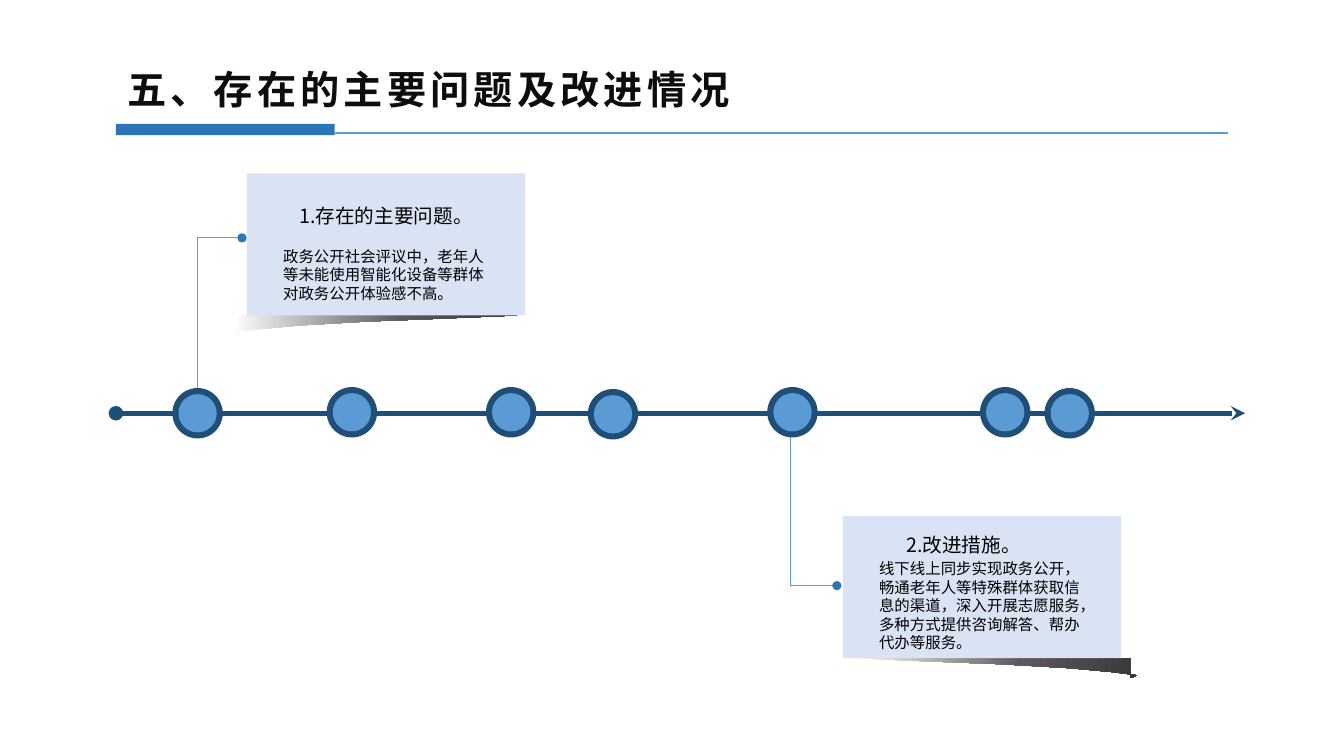
"""Build the timeline slide on main problems and improvements."""
from copy import deepcopy
from dataclasses import dataclass

from lxml.etree import SubElement
from pptx import Presentation
from pptx.dml.color import RGBColor
from pptx.enum.shapes import MSO_CONNECTOR, MSO_SHAPE
from pptx.enum.text import MSO_ANCHOR, MSO_AUTO_SIZE, PP_ALIGN
from pptx.oxml.ns import qn
from pptx.util import Inches, Pt

TITLE = "五、存在的主要问题及改进情况"
CARDS = [
    {
        "heading": "1.存在的主要问题。",
        "body": "政务公开社会评议中，老年人等未能使用智能化设备等群体对政务公开体验感不高。",
        "card": (2.45, 1.72),
        "heading_box": (2.87, 1.97, 2.01, 0.34),
        "body_box": (2.71, 2.4, 2.25, 0.65),
        "stem": (1.96, 3.85),
        "dot": (2.4, 2.36),
        "shadow_left": 2.37,
        "mirrored": False,
    },
    {
        "heading": "2.改进措施。",
        "body": "线下线上同步实现政务公开，畅通老年人等特殊群体获取信息的渠道，深入开展志愿服务，多种方式提供咨询解答、帮办代办等服务。",
        "card": (8.36, 5.12),
        "heading_box": (8.89, 5.24, 1.33, 0.34),
        "body_box": (8.62, 5.5, 2.25, 1.03),
        "stem": (7.84, 4.32),
        "dot": (8.3, 5.81),
        "shadow_left": 8.45,
        "mirrored": True,
    },
]
MILESTONES = [(1.96, 4.1), (3.49, 4.09), (5.07, 4.09), (6.08, 4.11),
              (7.86, 4.09), (9.97, 4.09), (10.61, 4.1)]
CARD_WIDTH, CARD_HEIGHT = 2.76, 1.41
SHADOW_OUTLINE = [(0, 0.2), (-0.07, 0.17), (0.16, 0.14), (0.59, 0.1), (1.28, 0.06),
                  (1.81, 0.04), (2.76, 0), (0, 0)]


@dataclass(frozen=True)
class Theme:
    """Colours, font and type sizes of the slide."""
    font: str = "Noto Sans CJK SC"
    title_ink: str = "0D0D0D"
    ink: str = "000000"
    accent: str = "2E75B6"
    light: str = "5B9BD5"
    dark: str = "1F4E79"
    card: str = "DAE3F3"
    shadow: tuple = ((0, "FFFFFF"), (0.59, "5B595B"), (1, "3B3838"))
    title_size: float = 28
    heading_size: float = 14
    body_size: float = 11


THEME = Theme()


def write_text(shape, text, size, color=THEME.ink, bold=False, spacing=0, wrap=False):
    """Put one formatted run of text in a shape."""
    frame = shape.text_frame
    frame.word_wrap = wrap
    frame.auto_size = MSO_AUTO_SIZE.SHAPE_TO_FIT_TEXT
    frame.vertical_anchor = MSO_ANCHOR.TOP
    paragraph = frame.paragraphs[0]
    paragraph.alignment = PP_ALIGN.LEFT
    run = paragraph.add_run()
    run.text = text
    run.font.size, run.font.bold = Pt(size), bold
    run.font.color.rgb = RGBColor.from_string(color)
    run.font.name = THEME.font
    properties = run.font._element
    SubElement(properties, qn("a:ea")).set("typeface", THEME.font)
    if spacing:
        properties.set("spc", str(spacing * 100))


def add_block(slide, kind, left, top, width, height, color):
    """Add a flat filled shape."""
    shape = slide.shapes.add_shape(kind, *map(Inches, (left, top, width, height)))
    shape.shadow.inherit = False
    shape.fill.solid()
    shape.fill.fore_color.rgb = RGBColor.from_string(color)
    shape.line.fill.background()


def add_circle(slide, center, diameter, color):
    """Add a filled circle around a centre point."""
    left, top = (value - diameter / 2 for value in center)
    add_block(slide, MSO_SHAPE.OVAL, left, top, diameter, diameter, color)


def add_line(slide, start, end, color, width, kind=MSO_CONNECTOR.STRAIGHT):
    """Add a connector without shadow."""
    line = slide.shapes.add_connector(kind, *map(Inches, (*start, *end)))
    line.line.color.rgb = RGBColor.from_string(color)
    line.line.width = Pt(width)
    SubElement(line._element.spPr, qn("a:effectLst"))
    return line


def add_stem(slide, start, end):
    """Add an elbow that runs vertically first, then across."""
    stem = add_line(slide, start, end, THEME.light, 0.5, MSO_CONNECTOR.ELBOW)
    adjustments = stem._element.spPr.find(qn("a:prstGeom")).find(qn("a:avLst"))
    guide = SubElement(adjustments, qn("a:gd"))
    guide.set("name", "adj1")
    guide.set("fmla", "val 0")


def add_curl(slide, left, top, mirrored):
    """Add the curved gradient shadow below a card."""
    points = [(Inches(left + (CARD_WIDTH - x if mirrored else x)), Inches(top + y))
              for x, y in SHADOW_OUTLINE]
    builder = slide.shapes.build_freeform(*points[0])
    builder.add_line_segments(points[1:], close=True)
    curl = builder.convert_to_shape()
    curl.shadow.inherit = False
    curl.line.fill.background()
    curl.fill.gradient()
    curl.fill.gradient_angle = 0
    stop_list = curl._element.spPr.find(qn("a:gradFill")).find(qn("a:gsLst"))
    stop_list.append(deepcopy(stop_list[0]))
    for stop, (position, color) in zip(curl.fill.gradient_stops, THEME.shadow):
        stop.position = position
        stop.color.rgb = RGBColor.from_string(color)


def add_title(slide):
    """Fill the title placeholder and underline it."""
    title = slide.shapes.title
    title.left, title.top, title.width, title.height = map(Inches, (1.16, 0.6, 6.26, 0.57))
    write_text(title, TITLE, THEME.title_size, color=THEME.title_ink, bold=True, spacing=3)
    add_block(slide, MSO_SHAPE.RECTANGLE, 1.15, 1.23, 2.17, 0.11, THEME.accent)
    add_line(slide, (3.32, 1.32), (12.18, 1.32), THEME.light, 2)


def add_card(slide, item):
    """Add a card with its shadow, texts and stem."""
    left, top = item["card"]
    add_curl(slide, item["shadow_left"], top + CARD_HEIGHT, item["mirrored"])
    add_block(slide, MSO_SHAPE.RECTANGLE, left, top, CARD_WIDTH, CARD_HEIGHT, THEME.card)
    for part, size, wrap in (("heading", THEME.heading_size, False),
                             ("body", THEME.body_size, True)):
        box = slide.shapes.add_textbox(*map(Inches, item[f"{part}_box"]))
        write_text(box, item[part], size, wrap=wrap)
    add_stem(slide, item["stem"], item["dot"])
    add_circle(slide, item["dot"], 0.09, THEME.accent)


def add_timeline(slide):
    """Add the arrow and its milestones."""
    axis = add_line(slide, (1.15, 4.1), (12.35, 4.1), THEME.dark, 3.5)
    outline = axis.line._get_or_add_ln()
    for end, kind in (("headEnd", "oval"), ("tailEnd", "stealth")):
        SubElement(outline, qn(f"a:{end}")).set("type", kind)
    for center in MILESTONES:
        add_circle(slide, center, 0.5, THEME.dark)
        add_circle(slide, center, 0.38, THEME.light)


def main():
    """Create and save the presentation."""
    presentation = Presentation()
    presentation.slide_width, presentation.slide_height = Inches(13.33), Inches(7.5)
    slide = presentation.slides.add_slide(presentation.slide_layouts[5])
    add_title(slide)
    for item in CARDS:
        add_card(slide, item)
    add_timeline(slide)
    presentation.save("out.pptx")


if __name__ == "__main__":
    main()
